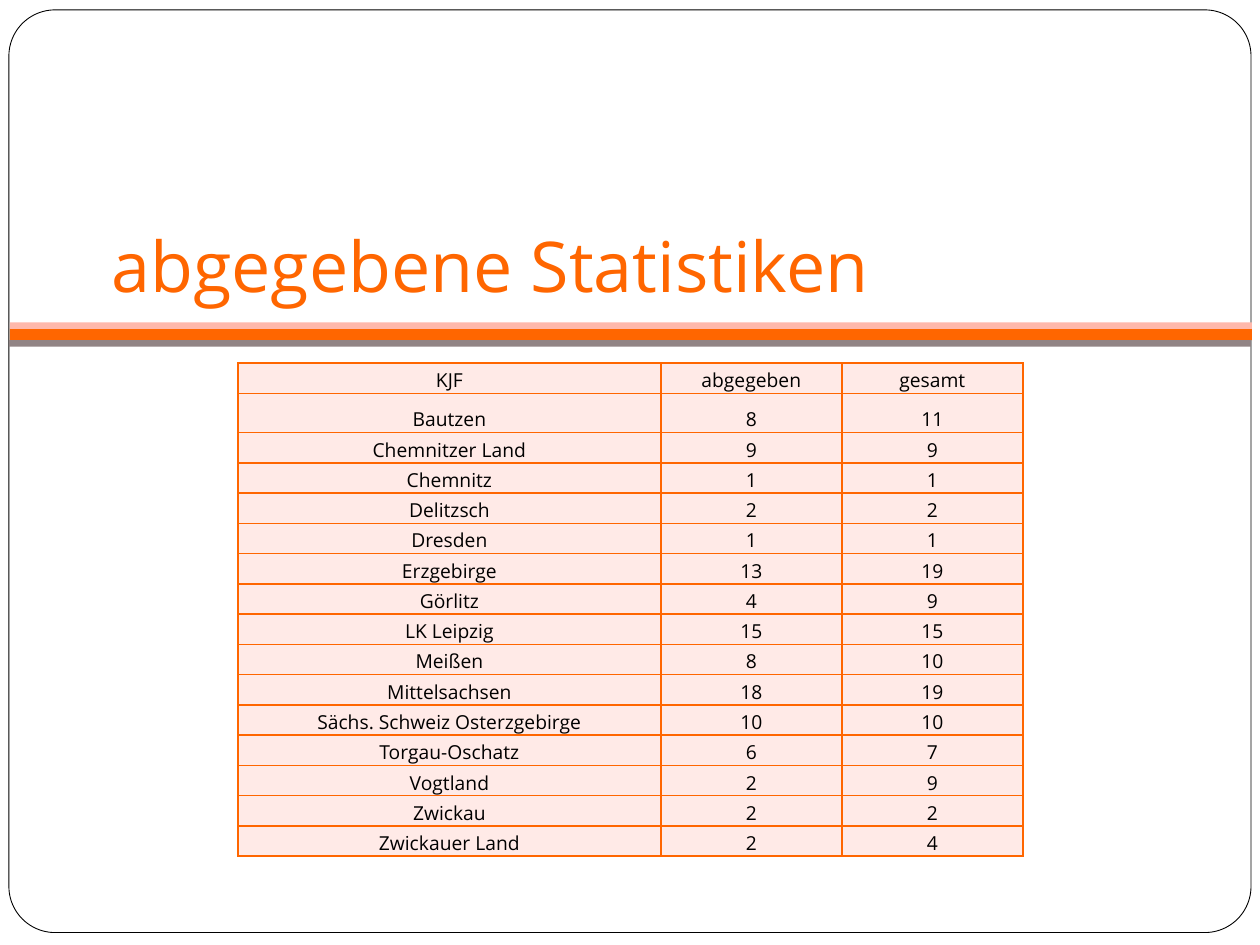
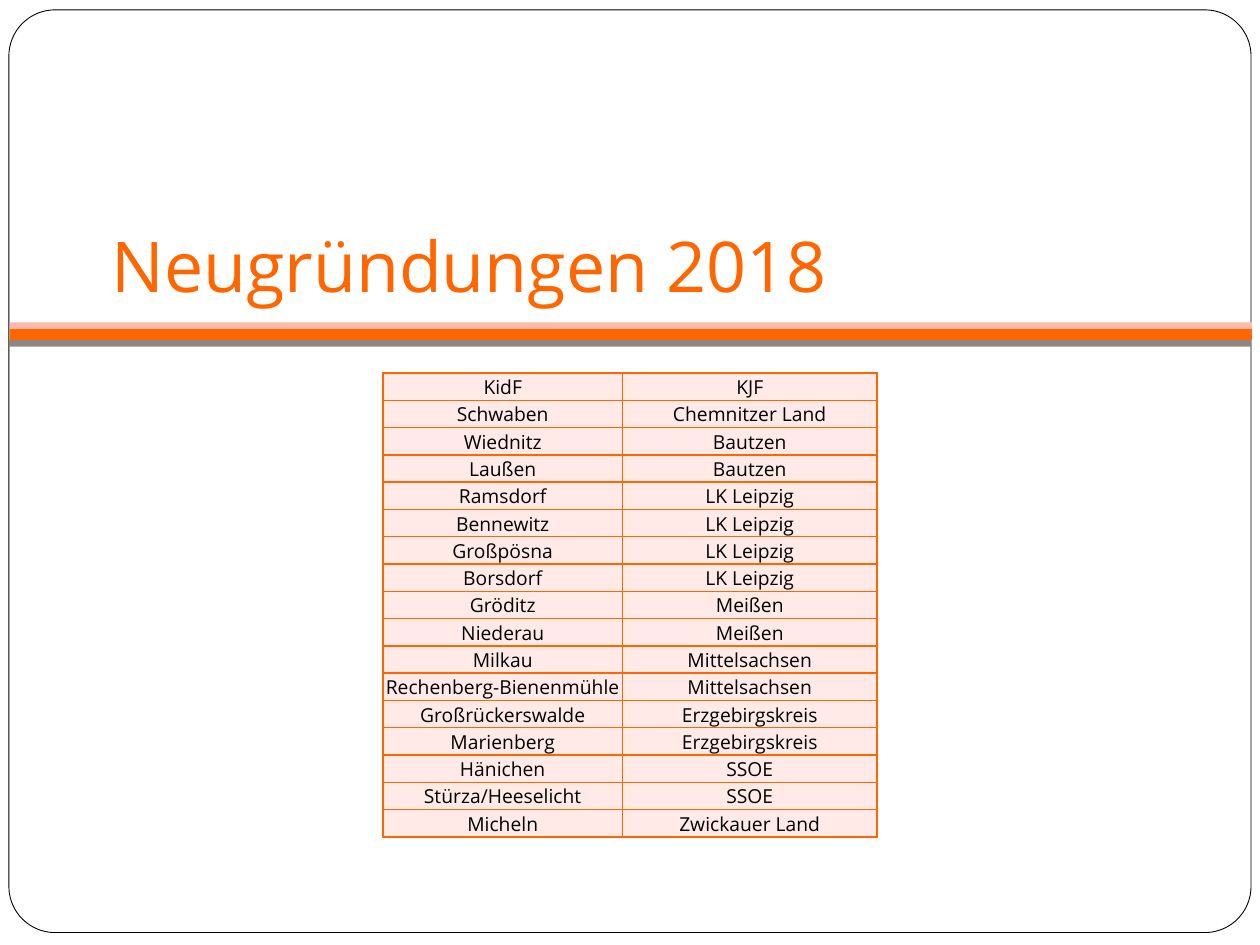
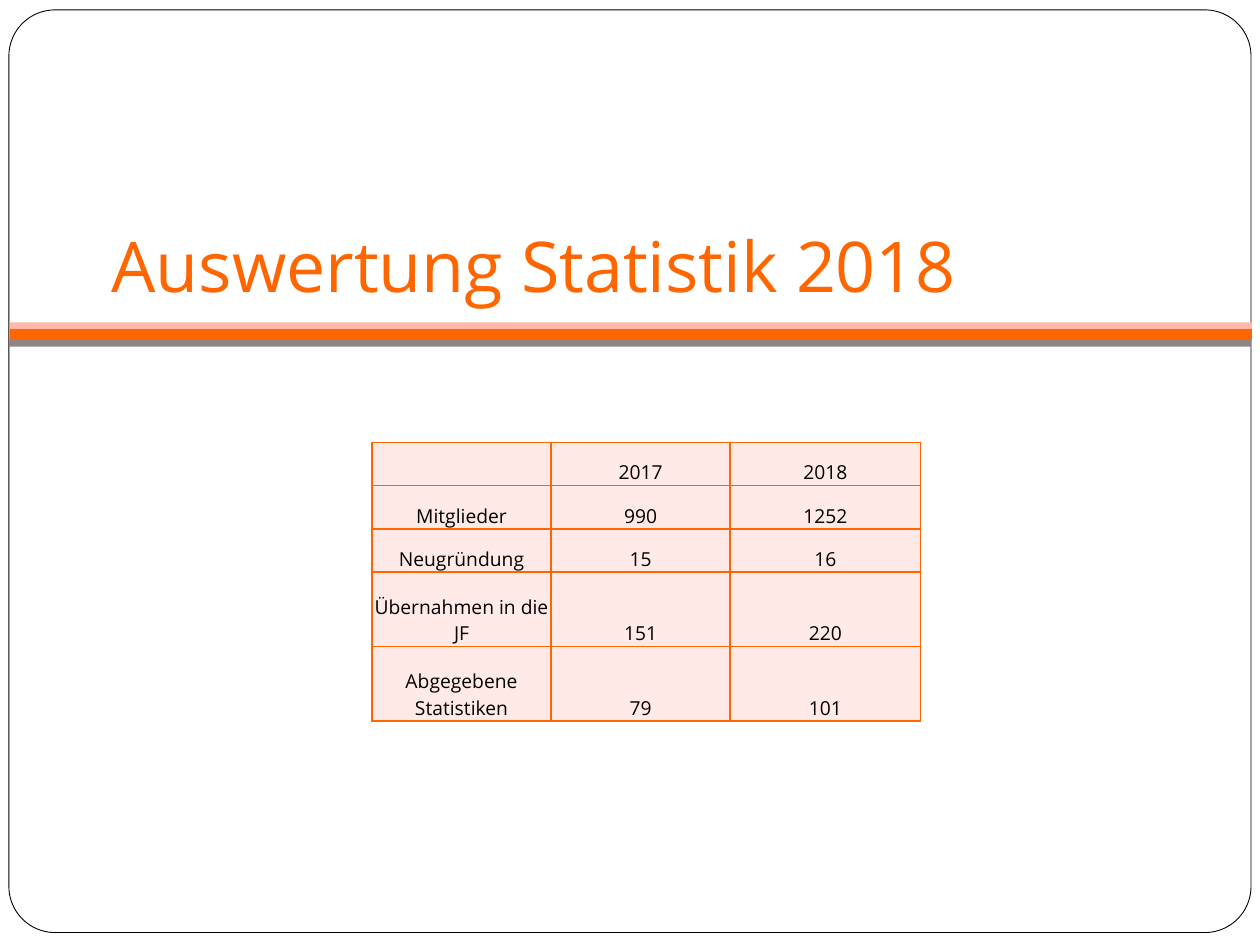
from lxml import etree
from pptx import Presentation
from pptx import util as u
from pptx.dml.color import RGBColor
from pptx.enum import shapes, text
from pptx.oxml import ns

COLOURS = {
    "paper": "FFFFFF",
    "ink": "000000",
    "orange": "FF6600",
    "salmon": "FFB8AB",
    "taupe": "918485",
    "blush": "FFEAE7",
}
FONT = "Open Sans"


def write(frame, content, size=11, colour="ink", align=text.PP_ALIGN.CENTER):
    para = frame.paragraphs[0]
    para.alignment = align
    span = para.add_run()
    span.text = content
    span.font.name = FONT
    span.font.size = u.Pt(size)
    span.font.color.rgb = RGBColor.from_string(COLOURS[colour])


def add_borders(cell, colour):
    properties = cell._tc.get_or_add_tcPr()
    for index, side in enumerate(("lnL", "lnR", "lnT", "lnB")):
        line = etree.Element(ns.qn(f"a:{side}"), w=str(u.Pt(1)))
        fill = etree.SubElement(line, ns.qn("a:solidFill"))
        etree.SubElement(fill, ns.qn("a:srgbClr"), val=COLOURS[colour])
        properties.insert(index, line)


deck = Presentation()
deck.slide_width = u.Cm(25.4)
deck.slide_height = u.Cm(19.05)

layout = deck.slide_layouts.get_by_name("Title Only")
for holder in list(layout.placeholders):
    if holder.placeholder_format.type != shapes.PP_PLACEHOLDER.TITLE:
        layout.shapes.element.remove(holder.element)

heading = layout.placeholders[0]
heading.left, heading.top = u.Cm(2), u.Cm(2.64)
heading.width, heading.height = u.Cm(21.6), u.Cm(3.78)
frame = heading.text_frame
frame.vertical_anchor = text.MSO_ANCHOR.BOTTOM
frame.auto_size = text.MSO_AUTO_SIZE.NONE
frame.word_wrap = True
frame.margin_left = frame.margin_right = frame.margin_bottom = u.Cm(0.25)
frame.margin_top = u.Cm(0.13)

BACKDROP = [
    ("ROUNDED_RECTANGLE", 0.18, 0.2, 18.6, "paper"),
    ("RECTANGLE", 0.2, 6.62, 0.24, "orange"),
    ("RECTANGLE", 0.2, 6.5, 0.13, "salmon"),
    ("RECTANGLE", 0.18, 6.86, 0.13, "taupe"),
]

TABLES = [
    {
        "title": "abgegebene Statistiken",
        "left": 4.8,
        "top": 7.32,
        "widths": [8.52, 3.65, 3.65],
        "heights": [0.61, 0.79] + [0.61] * 14,
        "rows": [
            ("KJF", "abgegeben", "gesamt"),
            ("Bautzen", 8, 11),
            ("Chemnitzer Land", 9, 9),
            ("Chemnitz", 1, 1),
            ("Delitzsch", 2, 2),
            ("Dresden", 1, 1),
            ("Erzgebirge", 13, 19),
            ("Görlitz", 4, 9),
            ("LK Leipzig", 15, 15),
            ("Meißen", 8, 10),
            ("Mittelsachsen", 18, 19),
            ("Sächs. Schweiz Osterzgebirge", 10, 10),
            ("Torgau-Oschatz", 6, 7),
            ("Vogtland", 2, 9),
            ("Zwickau", 2, 2),
            ("Zwickauer Land", 2, 4),
        ],
    },
    {
        "title": "Neugründungen 2018",
        "left": 7.72,
        "top": 7.52,
        "widths": [4.83, 5.13],
        "heights": [0.55] * 17,
        "rows": [
            ("KidF", "KJF"),
            ("Schwaben", "Chemnitzer Land"),
            ("Wiednitz", "Bautzen"),
            ("Laußen", "Bautzen"),
            ("Ramsdorf", "LK Leipzig"),
            ("Bennewitz", "LK Leipzig"),
            ("Großpösna", "LK Leipzig"),
            ("Borsdorf", "LK Leipzig"),
            ("Gröditz", "Meißen"),
            ("Niederau", "Meißen"),
            ("Milkau", "Mittelsachsen"),
            ("Rechenberg-Bienenmühle", "Mittelsachsen"),
            ("Großrückerswalde", "Erzgebirgskreis"),
            ("Marienberg", "Erzgebirgskreis"),
            ("Hänichen", "SSOE"),
            ("Stürza/Heeselicht", "SSOE"),
            ("Micheln", "Zwickauer Land"),
        ],
    },
    {
        "title": "Auswertung Statistik 2018",
        "left": 7.5,
        "top": 8.92,
        "widths": [3.61, 3.61, 3.84],
        "heights": [0.87] * 3 + [1.5] * 2,
        "rows": [
            ("", 2017, 2018),
            ("Mitglieder", 990, 1252),
            ("Neugründung", 15, 16),
            ("Übernahmen in die JF", 151, 220),
            ("Abgegebene Statistiken", 79, 101),
        ],
    },
]

pages = [deck.slides.add_slide(layout) for _ in TABLES]

for index, (kind, left, top, height, colour) in enumerate(BACKDROP):
    box = pages[0].shapes.add_shape(
        shapes.MSO_SHAPE[kind], u.Cm(left), u.Cm(top), u.Cm(25.04), u.Cm(height)
    )
    box.shadow.inherit = False
    box.fill.solid()
    box.fill.fore_color.rgb = RGBColor.from_string(COLOURS[colour])
    if kind == "ROUNDED_RECTANGLE":
        box.adjustments[0] = 0.05
        box.line.color.rgb = RGBColor.from_string(COLOURS["ink"])
        box.line.width = u.Pt(0.5)
    else:
        box.line.fill.background()
    layout.shapes.element.insert(2 + index, box.element)

for page, data in zip(pages, TABLES):
    write(page.shapes.title.text_frame, data["title"], size=40, colour="orange",
          align=text.PP_ALIGN.LEFT)
    widths, heights = data["widths"], data["heights"]
    table = page.shapes.add_table(
        len(heights), len(widths), u.Cm(data["left"]), u.Cm(data["top"]),
        u.Cm(sum(widths)), u.Cm(sum(heights)),
    ).table
    table.first_row = table.horz_banding = False
    for column, width in zip(table.columns, widths):
        column.width = u.Cm(width)
    for row, height, values in zip(table.rows, heights, data["rows"]):
        row.height = u.Cm(height)
        for cell, value in zip(row.cells, values):
            cell.vertical_anchor = text.MSO_ANCHOR.BOTTOM
            cell.margin_left = cell.margin_right = cell.margin_top = u.Cm(0.02)
            cell.margin_bottom = 0
            cell.fill.solid()
            cell.fill.fore_color.rgb = RGBColor.from_string(COLOURS["blush"])
            add_borders(cell, "orange")
            if value:
                write(cell.text_frame, str(value))

deck.save("out.pptx")
